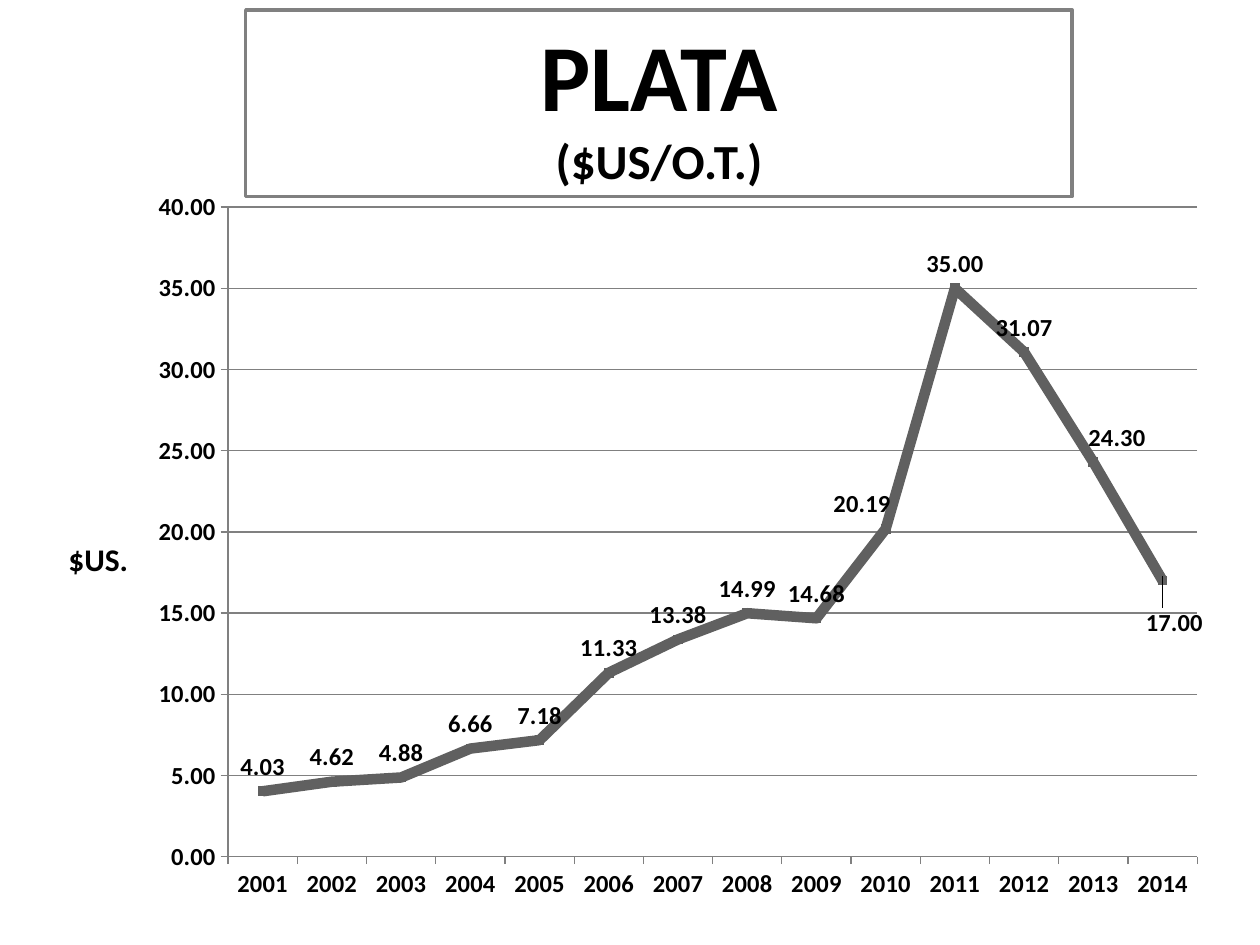
from pptx import Presentation
from pptx import util as u
from pptx.chart import data as cd
from pptx.dml import color
from pptx.enum import chart as ec
from pptx.enum import shapes, text
from pptx.oxml import parse_xml
from pptx.oxml.ns import nsdecls

INK = color.RGBColor(0x00, 0x00, 0x00)
WHITE = color.RGBColor(0xFF, 0xFF, 0xFF)
GREY = color.RGBColor(0x80, 0x80, 0x80)
DARK = color.RGBColor(0x60, 0x60, 0x60)
FACE = "Calibri"
PRICES = [4.03, 4.62, 4.88, 6.66, 7.18, 11.33, 13.38,
          14.99, 14.68, 20.19, 35, 31.07, 24.3, 17]
YEARS = [str(2001 + i) for i in range(len(PRICES))]
SHIFTS = {9: (-0.02, 0), 12: (0.02, 0), 13: (0.01, 0.09)}


def style(font, size, bold=True):
    font.name = FACE
    font.size = u.Pt(size)
    font.bold = bold
    font.color.rgb = INK


def write(para, words, size, bold=True):
    run = para.add_run()
    run.text = words
    style(run.font, size, bold)
    para.alignment = text.PP_ALIGN.CENTER


def place(x, y, w=None, h=None):
    vals = {"x": x, "y": y, "w": w, "h": h}
    inner = '<c:layoutTarget val="inner"/>' if w else ""
    modes = "" if w is None else '<c:xMode val="edge"/><c:yMode val="edge"/>'
    nums = "".join(f'<c:{k} val="{v}"/>' for k, v in vals.items() if v is not None)
    return parse_xml(f"<c:layout {nsdecls('c')}><c:manualLayout>{inner}{modes}"
                     f"{nums}</c:manualLayout></c:layout>")


def pin(title, x, y):
    node = title._element
    for old in node.findall("{*}layout"):
        node.remove(old)
    spot = place(x, y)
    for mode in ("yMode", "xMode"):
        spot[0].insert(0, parse_xml(f'<c:{mode} {nsdecls("c")} val="edge"/>'))
    node.find("{*}tx").addnext(spot)


def set_axis(axis):
    style(axis.tick_labels.font, 14)
    axis.major_tick_mark = ec.XL_TICK_MARK.OUTSIDE
    axis.minor_tick_mark = ec.XL_TICK_MARK.NONE
    axis.format.line.color.rgb = GREY
    axis.format.line.width = u.Pt(0.75)


def set_value(axis):
    set_axis(axis)
    axis.minimum_scale = 0
    axis.maximum_scale = 40
    axis.major_unit = 5
    axis.has_major_gridlines = True
    grid = axis.major_gridlines.format.line
    grid.color.rgb = GREY
    grid.width = u.Pt(0.75)
    axis.tick_labels.number_format = "0.00"
    axis.tick_labels.number_format_is_linked = False
    frame = axis.axis_title.text_frame
    write(frame.paragraphs[0], "$US.", 18)
    body = frame._txBody.bodyPr
    body.set("rot", "0")
    body.set("vert", "horz")
    pin(axis.axis_title, 0.02, 0.48)


def set_line(line):
    line.smooth = False
    line.format.line.color.rgb = DARK
    line.format.line.width = u.Pt(6)
    line.marker.style = ec.XL_MARKER_STYLE.SQUARE
    line.marker.size = 5
    line.marker.format.fill.solid()
    line.marker.format.fill.fore_color.rgb = DARK
    line.marker.format.line.color.rgb = DARK
    tags = line.data_labels
    tags.show_value = True
    tags.number_format = "0.00"
    tags.number_format_is_linked = False
    tags.position = ec.XL_LABEL_POSITION.ABOVE
    style(tags.font, 14)
    for i, (x, y) in SHIFTS.items():
        tag = line.points[i].data_label
        style(tag.font, 14)
        tag.position = ec.XL_LABEL_POSITION.ABOVE
        tag._dLbl.insert(1, place(x, y))


def add_prices(slide):
    data = cd.CategoryChartData(number_format="0.00")
    data.categories = YEARS
    data.add_series("Series 1", PRICES)
    chart = slide.shapes.add_chart(
        ec.XL_CHART_TYPE.LINE_MARKERS, u.Inches(0.31), u.Inches(1.41),
        u.Inches(9.38), u.Inches(5.86), data).chart
    style(chart.font, 10, False)
    chart.has_legend = False
    chart.has_title = False
    chart.plots[0].vary_by_categories = False
    set_axis(chart.category_axis)
    set_value(chart.value_axis)
    set_line(chart.plots[0].series[0])
    area = chart._chartSpace.chart.plotArea
    for old in area.findall("{*}layout"):
        area.remove(old)
    area.insert(0, place(0.16, 0.04, 0.82, 0.88))


def add_title(slide):
    box = slide.shapes.add_shape(
        shapes.MSO_SHAPE.RECTANGLE, u.Inches(1.95), u.Inches(0.08),
        u.Inches(6.56), u.Inches(1.48))
    box.shadow.inherit = False
    box.fill.solid()
    box.fill.fore_color.rgb = WHITE
    box.line.color.rgb = GREY
    box.line.width = u.Pt(2)
    frame = box.text_frame
    frame.word_wrap = True
    write(frame.paragraphs[0], "PLATA", 54)
    write(frame.add_paragraph(), "($US/O.T.)", 28)


def main():
    deck = Presentation()
    deck.slide_width = u.Inches(10)
    deck.slide_height = u.Inches(7.5)
    slide = deck.slides.add_slide(deck.slide_layouts[6])
    add_prices(slide)
    add_title(slide)
    deck.save("out.pptx")


if __name__ == "__main__":
    main()
